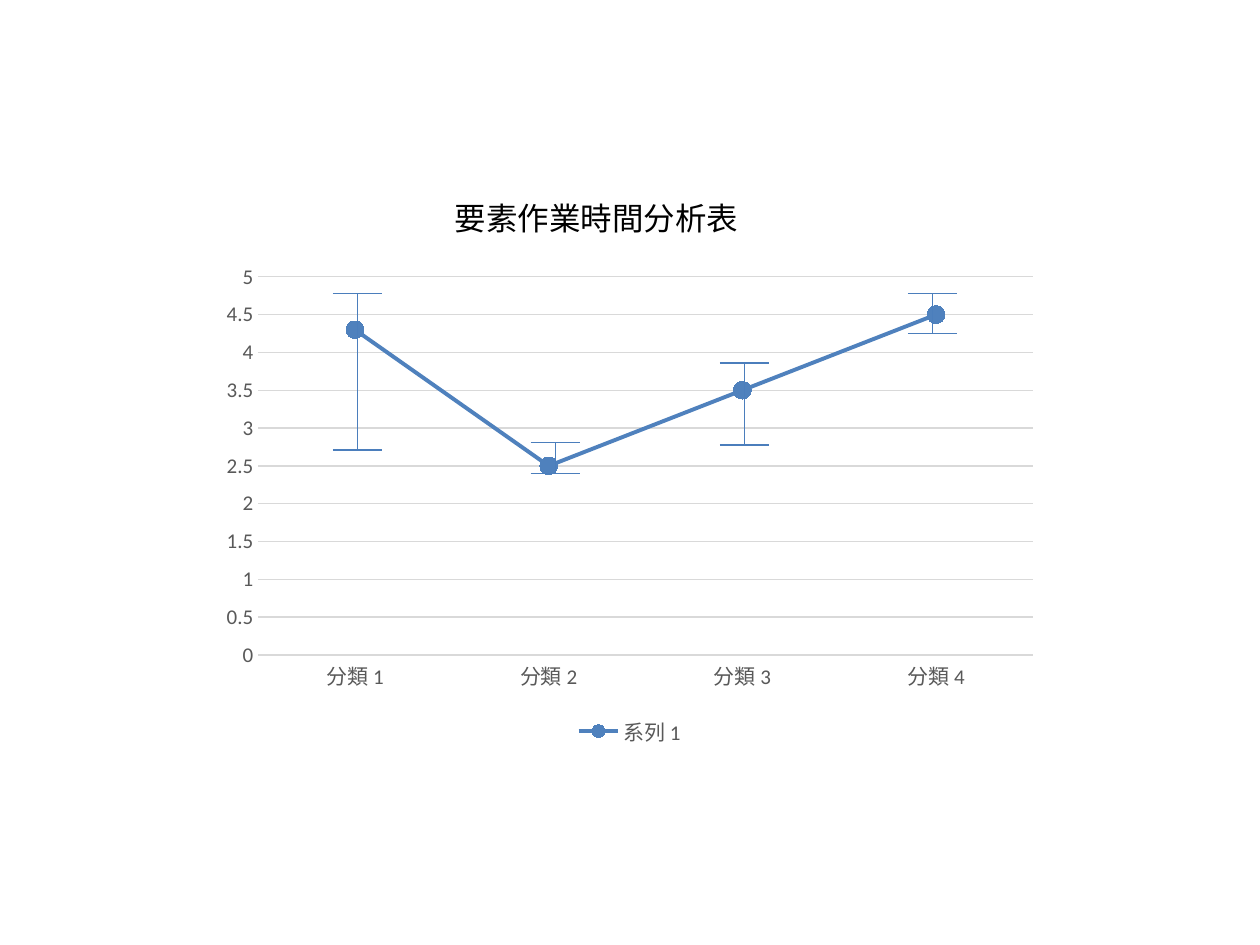
from lxml.etree import SubElement
from pptx import Presentation
from pptx.chart.data import CategoryChartData
from pptx.dml.color import RGBColor
from pptx.enum.chart import XL_CHART_TYPE, XL_LEGEND_POSITION, XL_MARKER_STYLE, XL_TICK_MARK
from pptx.enum.shapes import MSO_CONNECTOR
from pptx.enum.text import MSO_AUTO_SIZE
from pptx.oxml.ns import qn
from pptx.util import Cm, Pt

# Centre, top and bottom of each time range, in cm
TIME_RANGES = [
    (18.8, 5.92, 6.73),
    (15.01, 7.32, 8.97),
    (7.21, 5.92, 9.07),
    (11.2, 8.92, 9.55),
]
CAP_HALF_WIDTH = 0.5


def rgb(hex_code):
    return RGBColor.from_string(hex_code)


class SlideBuilder:
    typeface = "Calibri"
    title_color = "000000"
    label_color = "595959"
    grid_color = "D9D9D9"
    series_color = "4F81BD"
    range_color = "4B7EBC"

    def __init__(self, slide):
        self.slide = slide

    def style_font(self, font, size, color):
        font.name = self.typeface
        font.size = Pt(size)
        font.color.rgb = rgb(color)

    def style_line(self, line, width, color):
        line.width = Pt(width)
        line.color.rgb = rgb(color)

    def title(self, wording, left, top, width, height):
        box = self.slide.shapes.add_textbox(Cm(left), Cm(top), Cm(width), Cm(height))
        frame = box.text_frame
        frame.word_wrap = True
        frame.auto_size = MSO_AUTO_SIZE.SHAPE_TO_FIT_TEXT
        heading = frame.paragraphs[0]
        heading.text = wording
        self.style_font(heading.font, 18, self.title_color)

    def line_chart(self, categories, name, values, left, top, width, height):
        times = CategoryChartData()
        times.categories = categories
        times.add_series(name, values)
        chart = self.slide.shapes.add_chart(
            XL_CHART_TYPE.LINE_MARKERS, Cm(left), Cm(top), Cm(width), Cm(height), times
        ).chart
        chart.has_title = False
        self.style_font(chart.font, 12, self.label_color)

        chart.has_legend = True
        chart.legend.position = XL_LEGEND_POSITION.BOTTOM
        chart.legend.include_in_layout = False
        self.style_font(chart.legend.font, 12, self.label_color)

        for axis in (chart.category_axis, chart.value_axis):
            axis.major_tick_mark = axis.minor_tick_mark = XL_TICK_MARK.NONE
            self.style_font(axis.tick_labels.font, 12, self.label_color)
        self.style_line(chart.category_axis.format.line, 0.75, self.grid_color)
        value_axis = chart.value_axis
        value_axis.minimum_scale, value_axis.maximum_scale = 0, 5
        value_axis.major_unit = 0.5
        value_axis.format.line.fill.background()
        value_axis.has_major_gridlines = True
        self.style_line(value_axis.major_gridlines.format.line, 0.75, self.grid_color)

        plot = chart.plots[0]
        plot.vary_by_categories = False
        series = plot.series[0]
        series.smooth = False
        self.style_line(series.format.line, 2.25, self.series_color)
        marker = series.marker
        marker.style = XL_MARKER_STYLE.CIRCLE
        marker.size = 10
        marker.format.fill.solid()
        marker.format.fill.fore_color.rgb = rgb(self.series_color)
        self.style_line(marker.format.line, 0.75, self.series_color)

    def line(self, shapes, x1, y1, x2, y2):
        connector = shapes.add_connector(
            MSO_CONNECTOR.STRAIGHT, Cm(x1), Cm(y1), Cm(x2), Cm(y2)
        )
        self.style_line(connector.line, 0.75, self.range_color)
        SubElement(connector.element.spPr, qn("a:effectLst"))

    def time_range(self, center, top, bottom):
        """Draw a vertical bar with a cap at each end, as one group."""
        shapes = self.slide.shapes.add_group_shape().shapes
        self.line(shapes, center, top, center, bottom)
        for y in (bottom, top):
            self.line(shapes, center - CAP_HALF_WIDTH, y, center + CAP_HALF_WIDTH, y)


def main():
    deck = Presentation()
    deck.slide_width, deck.slide_height = Cm(25.4), Cm(19.05)
    builder = SlideBuilder(deck.slides.add_slide(deck.slide_layouts[6]))
    builder.line_chart(
        [f"分類 {number}" for number in range(1, 5)],
        "系列 1",
        [4.3, 2.5, 3.5, 4.5],
        4.23, 5.13, 16.93, 10.03,
    )
    for center, top, bottom in TIME_RANGES:
        builder.time_range(center, top, bottom)
    builder.title("要素作業時間分析表", 8.92, 3.89, 7.6, 1.02)
    deck.save("out.pptx")


if __name__ == "__main__":
    main()
